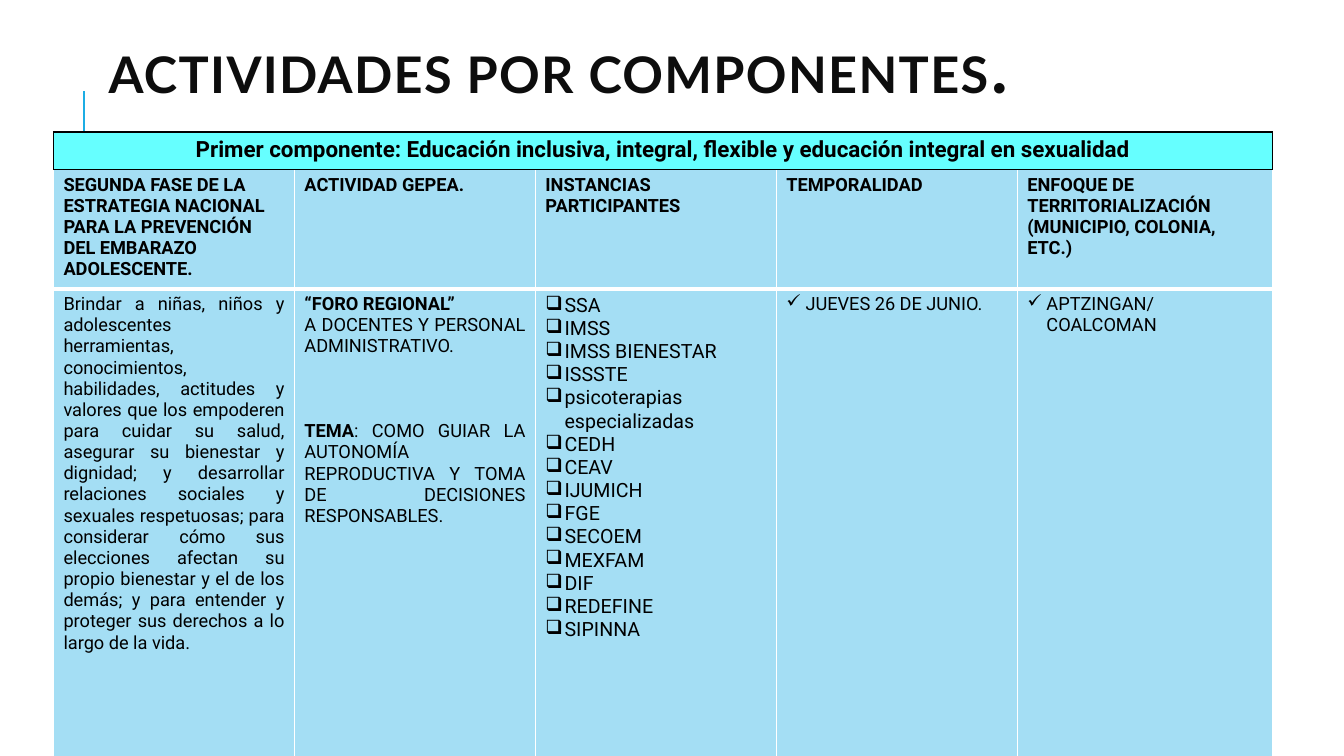
"""Build the slide of activities by component."""
from lxml import etree
from pptx import Presentation
from pptx.dml.color import RGBColor
from pptx.enum.shapes import MSO_CONNECTOR
from pptx.enum.text import MSO_ANCHOR, PP_ALIGN
from pptx.oxml.ns import qn
from pptx.util import Inches, Pt

LEFT, CENTER, JUSTIFY = PP_ALIGN.LEFT, PP_ALIGN.CENTER, PP_ALIGN.JUSTIFY
MIDDLE = MSO_ANCHOR.MIDDLE
STRAIGHT = MSO_CONNECTOR.STRAIGHT
BLACK = RGBColor(0x00, 0x00, 0x00)
WHITE = RGBColor(0xFF, 0xFF, 0xFF)
TITLE_COLOR = RGBColor(0x0D, 0x0D, 0x0D)
ACCENT = RGBColor(0x1C, 0xAD, 0xE4)
SKY = RGBColor(0xA4, 0xDE, 0xF4)
CYAN = RGBColor(0x66, 0xFF, 0xFF)

TITLE = "ACTIVIDADES POR COMPONENTES"
BANNER = ("Primer componente: Educación inclusiva, integral, flexible "
          "y educación integral en sexualidad")
HEADERS = [
    "SEGUNDA FASE DE LA ESTRATEGIA NACIONAL PARA LA PREVENCIÓN DEL EMBARAZO ADOLESCENTE.",
    "ACTIVIDAD GEPEA.",
    "INSTANCIAS PARTICIPANTES",
    "TEMPORALIDAD",
    "ENFOQUE DE TERRITORIALIZACIÓN (MUNICIPIO, COLONIA, ETC.)",
]
PURPOSE = (
    "Brindar a niñas, niños y adolescentes herramientas, conocimientos, habilidades, "
    "actitudes y valores que los empoderen para cuidar su salud, asegurar su bienestar "
    "y dignidad; y desarrollar relaciones sociales y sexuales respetuosas; para "
    "considerar cómo sus elecciones afectan su propio bienestar y el de los demás; y "
    "para entender y proteger sus derechos a lo largo de la vida."
)
FORUM = "“FORO REGIONAL”"
AUDIENCE = "A DOCENTES Y PERSONAL ADMINISTRATIVO."
TOPIC_LABEL = "TEMA"
TOPIC = ": COMO GUIAR LA AUTONOMÍA REPRODUCTIVA Y TOMA DE DECISIONES RESPONSABLES."
INSTITUTIONS = [
    "SSA", "IMSS", "IMSS BIENESTAR", "ISSSTE", "psicoterapias especializadas",
    "CEDH", "CEAV", "IJUMICH", "FGE", "SECOEM", "MEXFAM", "DIF", "REDEFINE", "SIPINNA",
]
DATE = "JUEVES 26 DE JUNIO."
PLACE = "APTZINGAN/ COALCOMAN"

TABLE_LEFT, BANNER_TOP, BANNER_HEIGHT = 0.53, 1.31, 0.37
COLUMN_WIDTHS = [2.39] * 4 + [2.53]
ROW_HEIGHTS = [0.94, 4.66]
BULLET_INDENT = 0.19


def write(paragraph, text, *, size=13, font="Roboto", color=BLACK, bold=False,
          align=LEFT, bullet=None, before=0, spacing=None):
    """Append a formatted run to a paragraph."""
    properties = paragraph._p.get_or_add_pPr()
    if bullet:
        indent = Inches(BULLET_INDENT)
        properties.set("marL", str(indent))
        properties.set("indent", str(-indent))
        etree.SubElement(properties, qn("a:buChar")).set("char", bullet)
    paragraph.alignment = align
    if before:
        paragraph.space_before = Pt(before)
    run = paragraph.add_run()
    run.text = text
    run.font.size = Pt(size)
    run.font.name = font
    run.font.bold = bold
    run.font.color.rgb = color
    if spacing:
        run._r.get_or_add_rPr().set("spc", str(spacing * 100))


def style_cell(cell, fill, border, left=1, right=1, top=1, bottom=1):
    """Fill a cell and draw its four borders."""
    cell.fill.solid()
    cell.fill.fore_color.rgb = fill
    properties = cell._tc.get_or_add_tcPr()
    widths = {"lnL": left, "lnR": right, "lnT": top, "lnB": bottom}
    for index, (side, width) in enumerate(widths.items()):
        line = etree.Element(qn(f"a:{side}"), w=str(Pt(width)))
        solid = etree.SubElement(line, qn("a:solidFill"))
        etree.SubElement(solid, qn("a:srgbClr"), val=str(border))
        properties.insert(index, line)


def add_grid(slide, top, widths, heights):
    """Add a table with the given column widths and row heights."""
    table = slide.shapes.add_table(
        len(heights), len(widths), Inches(TABLE_LEFT), Inches(top),
        Inches(sum(widths)), Inches(sum(heights))).table
    for column, width in zip(table.columns, widths):
        column.width = Inches(width)
    for row, height in zip(table.rows, heights):
        row.height = Inches(height)
    return table


def add_title(slide):
    """Add the accent line and the title."""
    line = slide.shapes.add_connector(
        STRAIGHT, Inches(0.83), Inches(1.9), Inches(0.83), Inches(0.9))
    line.line.color.rgb = ACCENT
    line.line.width = Pt(1.5)
    etree.SubElement(line._element.spPr, qn("a:effectLst"))
    box = slide.shapes.add_textbox(Inches(0.98), 0, Inches(11.5), Inches(1.45))
    frame = box.text_frame
    frame.word_wrap = True
    frame.vertical_anchor = MIDDLE
    paragraph = frame.paragraphs[0]
    paragraph.line_spacing = 0.8
    for text, size in ((TITLE, 36), (".", 50)):
        write(paragraph, text, size=size, font="Lato", color=TITLE_COLOR,
              bold=True, spacing=1)


def add_activities(slide):
    """Add the table of activities."""
    table = add_grid(slide, BANNER_TOP + BANNER_HEIGHT, COLUMN_WIDTHS, ROW_HEIGHTS)
    for column, header in enumerate(HEADERS):
        heading, body = table.cell(0, column), table.cell(1, column)
        style_cell(heading, SKY, WHITE, bottom=3)
        style_cell(body, SKY, WHITE, top=3)
        write(heading.text_frame.paragraphs[0], header, bold=True)

    purpose, activity, institutions, date, place = (
        table.cell(1, column).text_frame for column in range(len(HEADERS)))
    write(purpose.paragraphs[0], PURPOSE, align=JUSTIFY)
    write(activity.paragraphs[0], FORUM, bold=True, align=JUSTIFY)
    write(activity.add_paragraph(), AUDIENCE, align=JUSTIFY)
    topic = activity.add_paragraph()
    write(topic, TOPIC_LABEL, bold=True, align=JUSTIFY, before=45.5)
    write(topic, TOPIC, align=JUSTIFY)
    for index, name in enumerate(INSTITUTIONS):
        paragraph = institutions.add_paragraph() if index else institutions.paragraphs[0]
        write(paragraph, name, size=14, align=JUSTIFY, bullet="❑")
    for frame, text in ((date, DATE), (place, PLACE)):
        write(frame.paragraphs[0], text, bullet="✓")


def add_banner(slide):
    """Add the one-cell table with the component name."""
    cell = add_grid(slide, BANNER_TOP, [sum(COLUMN_WIDTHS)], [BANNER_HEIGHT]).cell(0, 0)
    style_cell(cell, CYAN, BLACK)
    write(cell.text_frame.paragraphs[0], BANNER, size=16, bold=True, align=CENTER)


def main():
    """Build and save the presentation."""
    presentation = Presentation()
    presentation.slide_width = Inches(13.33)
    presentation.slide_height = Inches(7.5)
    slide = presentation.slides.add_slide(presentation.slide_layouts[6])
    add_title(slide)
    add_activities(slide)
    add_banner(slide)
    presentation.save("out.pptx")


if __name__ == "__main__":
    main()
